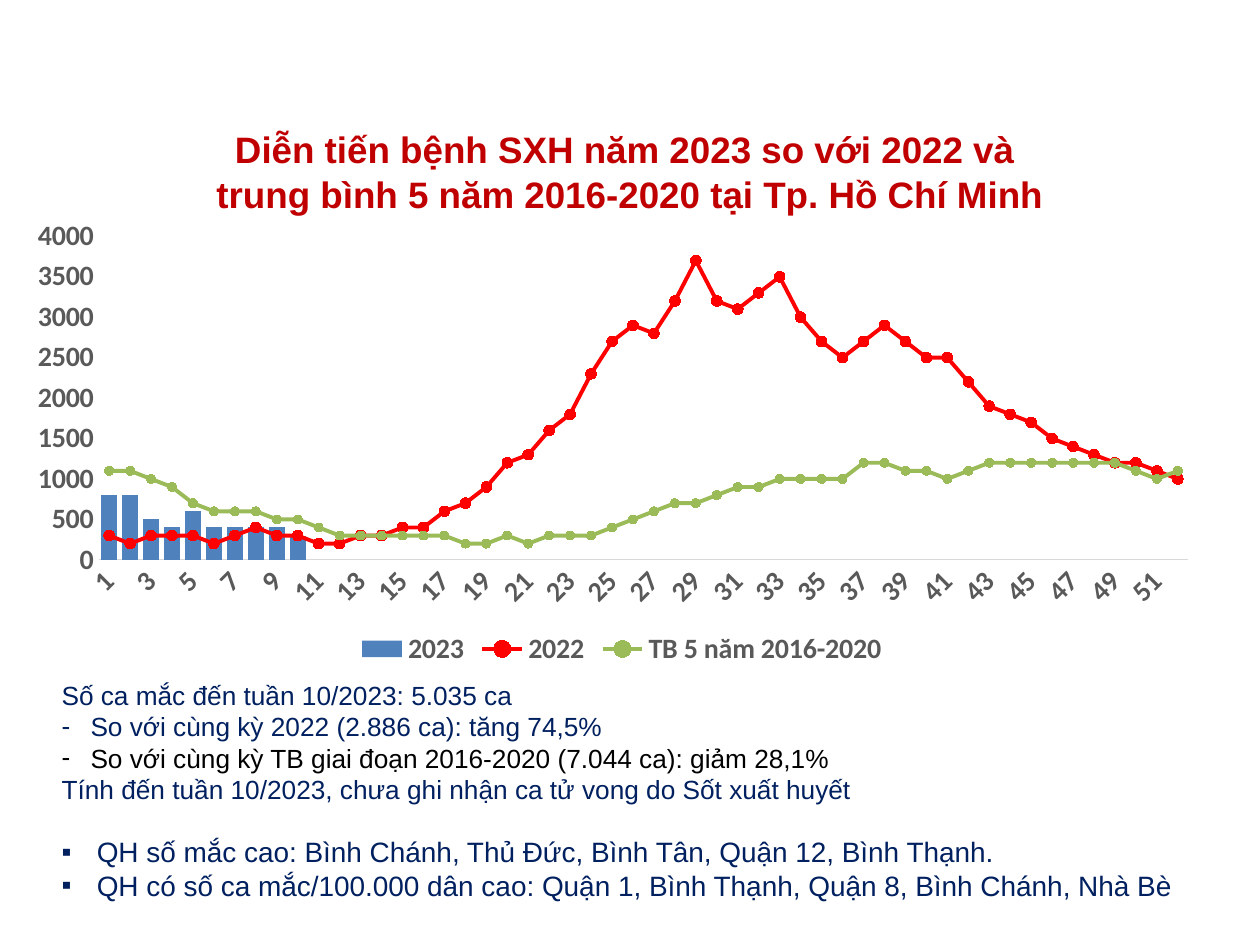
from dataclasses import dataclass

from lxml import etree
from pptx import Presentation
from pptx import util as u
from pptx.chart.data import CategoryChartData
from pptx.dml.color import RGBColor
from pptx.enum import chart as charts
from pptx.enum import text
from pptx.oxml.ns import qn


@dataclass(frozen=True)
class Theme:
    title: str = "C00000"
    body: str = "002060"
    black: str = "000000"
    axis_text: str = "595959"
    axis_line: str = "D9D9D9"
    text_font: str = "Arial"
    chart_font: str = "Calibri"
    title_size: int = 21
    note_size: int = 15
    district_size: int = 16
    chart_size: int = 16
    line_width: float = 2.25


THEME = Theme()


@dataclass(frozen=True)
class Note:
    words: str
    size: int = THEME.note_size
    color: str = THEME.body
    bullet: str = ""
    indent: float = 0
    align: text.PP_ALIGN = text.PP_ALIGN.LEFT
    before: float = 0


@dataclass(frozen=True)
class WeeklyCases:
    name: str
    color: str
    hundreds: tuple[int, ...]
    marker_size: int = 0


def district(words: str, before: float = 0) -> Note:
    return Note(words, THEME.district_size, bullet="▪", indent=0.28,
                align=text.PP_ALIGN.JUSTIFY, before=before)


TITLE_LINES = (
    "Diễn tiến bệnh SXH năm 2023 so với 2022 và ",
    "trung bình 5 năm 2016-2020 tại Tp. Hồ Chí Minh",
)
NOTES = (
    Note("Số ca mắc đến tuần 10/2023: 5.035 ca"),
    Note("So với cùng kỳ 2022 (2.886 ca): tăng 74,5%", bullet="-", indent=0.23),
    Note("So với cùng kỳ TB giai đoạn 2016-2020 (7.044 ca): giảm 28,1%",
         color=THEME.black, bullet="-", indent=0.23),
    Note("Tính đến tuần 10/2023, chưa ghi nhận ca tử vong do Sốt xuất huyết"),
    district("QH số mắc cao: Bình Chánh, Thủ Đức, Bình Tân, Quận 12, Bình Thạnh.", before=17),
    district("QH có số ca mắc/100.000 dân cao: Quận 1, Bình Thạnh, Quận 8, Bình Chánh, Nhà Bè"),
)
WEEKS = 52
YEARS = (
    WeeklyCases("2023", "4F81BD", (8, 8, 5, 4, 6, 4, 4, 4, 4, 3)),
    WeeklyCases("2022", "FF0000", (
        3, 2, 3, 3, 3, 2, 3, 4, 3, 3, 2, 2, 3, 3, 4, 4, 6, 7, 9, 12, 13, 16, 18, 23, 27, 29,
        28, 32, 37, 32, 31, 33, 35, 30, 27, 25, 27, 29, 27, 25, 25, 22, 19, 18, 17, 15, 14, 13,
        12, 12, 11, 10), 6),
    WeeklyCases("TB 5 năm 2016-2020", "9BBB59", (
        11, 11, 10, 9, 7, 6, 6, 6, 5, 5, 4, 3, 3, 3, 3, 3, 3, 2, 2, 3, 2, 3, 3, 3, 4, 5,
        6, 7, 7, 8, 9, 9, 10, 10, 10, 12, 12, 11, 11, 10, 11, 12, 12, 12, 12, 12, 12, 12,
        11, 10, 11), 5),
)
# The five-year mean stays level at 1000 for three weeks before it rises.
MEAN_WEEKS = YEARS[2].hundreds[:34] + (10,) + YEARS[2].hundreds[34:]


def style_font(font, name: str, size: float, color: str, bold: bool = False) -> None:
    font.name, font.size, font.bold = name, u.Pt(size), bold
    font.color.rgb = RGBColor.from_string(color)


def add_title(page) -> None:
    box = page.shapes.title
    box.left, box.top, box.width, box.height = map(u.Inches, (0, 1.21, 10, 0.61))
    frame = box.text_frame
    frame.word_wrap = True
    frame.auto_size = text.MSO_AUTO_SIZE.NONE
    frame.vertical_anchor = text.MSO_ANCHOR.BOTTOM
    frame.margin_bottom = u.Inches(0.11)
    para = frame.paragraphs[0]
    para.alignment = text.PP_ALIGN.CENTER
    for index, line in enumerate(TITLE_LINES):
        if index:
            para.add_line_break()
        span = para.add_run()
        span.text = line
        style_font(span.font, THEME.text_font, THEME.title_size, THEME.title, True)


def set_bullet(para, bullet: str, indent: float) -> None:
    properties = para._p.get_or_add_pPr()
    properties.set("marL", str(u.Inches(indent)))
    properties.set("indent", str(-u.Inches(indent)))
    etree.SubElement(properties, qn("a:buFont"), typeface=THEME.text_font)
    etree.SubElement(properties, qn("a:buChar"), char=bullet)


def add_notes(page) -> None:
    box = page.shapes.add_textbox(*map(u.Inches, (0.39, 5.34, 9.22, 1.9)))
    frame = box.text_frame
    frame.word_wrap = True
    frame.auto_size = text.MSO_AUTO_SIZE.SHAPE_TO_FIT_TEXT
    for index, note in enumerate(NOTES):
        para = frame.add_paragraph() if index else frame.paragraphs[0]
        para.alignment = note.align
        para.space_before = u.Pt(note.before)
        if note.bullet:
            set_bullet(para, note.bullet, note.indent)
        span = para.add_run()
        span.text = note.words
        style_font(span.font, THEME.text_font, note.size, note.color)


def move_to_lines(chart) -> None:
    """Turn every series after the first into a line on the same axes."""
    bars = chart.plots[0]._element
    lines = etree.Element(qn("c:lineChart"))
    etree.SubElement(lines, qn("c:grouping"), val="standard")
    etree.SubElement(lines, qn("c:varyColors"), val="0")
    for series in bars.findall(qn("c:ser"))[1:]:
        for flag in series.findall(qn("c:invertIfNegative")):
            series.remove(flag)
        lines.append(series)
    etree.SubElement(lines, qn("c:marker"), val="1")
    for axis in bars.findall(qn("c:axId")):
        etree.SubElement(lines, qn("c:axId"), val=axis.get("val"))
    bars.addnext(lines)


def place_plot(chart, x: float, y: float, w: float, h: float) -> None:
    area = chart._chartSpace.find(".//" + qn("c:plotArea"))
    for old in area.findall(qn("c:layout")):
        area.remove(old)
    layout = etree.Element(qn("c:layout"))
    manual = etree.SubElement(layout, qn("c:manualLayout"))
    settings = {"layoutTarget": "inner", "xMode": "edge", "yMode": "edge",
                "x": x, "y": y, "w": w, "h": h}
    for name, value in settings.items():
        etree.SubElement(manual, qn("c:" + name), val=str(value))
    area.insert(0, layout)


def style_axes(chart) -> None:
    weeks, cases = chart.category_axis, chart.value_axis
    for axis in (weeks, cases):
        axis.has_major_gridlines = False
        axis.major_tick_mark = axis.minor_tick_mark = charts.XL_TICK_MARK.NONE
        style_font(axis.tick_labels.font, THEME.chart_font, THEME.chart_size,
                   THEME.axis_text, True)
    weeks.format.line.color.rgb = RGBColor.from_string(THEME.axis_line)
    weeks.format.line.width = u.Pt(0.75)
    weeks._element.find(qn("c:txPr")).find(qn("a:bodyPr")).set("rot", "-2700000")
    cases.format.line.fill.background()
    cases.minimum_scale, cases.maximum_scale, cases.major_unit = 0, 4000, 500


def style_line(series, year: WeeklyCases) -> None:
    color = RGBColor.from_string(year.color)
    series.smooth = False
    series.format.line.color.rgb = color
    series.format.line.width = u.Pt(THEME.line_width)
    marker = series.marker
    marker.style, marker.size = charts.XL_MARKER_STYLE.CIRCLE, year.marker_size
    marker.format.fill.solid()
    marker.format.fill.fore_color.rgb = color
    marker.format.line.color.rgb = color


def add_case_chart(page) -> None:
    data = CategoryChartData()
    data.categories = [str(week) for week in range(1, WEEKS + 1)]
    for year in YEARS:
        hundreds = MEAN_WEEKS if year is YEARS[2] else year.hundreds
        values = [100 * count for count in hundreds]
        data.add_series(year.name, values + [None] * (WEEKS - len(values)))
    chart = page.shapes.add_chart(charts.XL_CHART_TYPE.COLUMN_CLUSTERED,
                                  *map(u.Inches, (0.27, 1.74, 9.33, 3.59)), data).chart
    chart.has_title = False
    style_font(chart.font, THEME.chart_font, THEME.chart_size, THEME.black, True)
    move_to_lines(chart)
    place_plot(chart, 0.055, 0.037, 0.927, 0.716)
    style_axes(chart)
    bars, lines = chart.plots
    bars.gap_width, bars.overlap, bars.vary_by_categories = 28, -66, False
    bars.series[0].format.fill.solid()
    bars.series[0].format.fill.fore_color.rgb = RGBColor.from_string(YEARS[0].color)
    for series, year in zip(lines.series, YEARS[1:]):
        style_line(series, year)
    chart.has_legend = True
    chart.legend.position = charts.XL_LEGEND_POSITION.BOTTOM
    chart.legend.include_in_layout = False
    style_font(chart.legend.font, THEME.chart_font, THEME.chart_size, THEME.axis_text, True)


def main() -> None:
    deck = Presentation()
    deck.slide_width, deck.slide_height = u.Inches(10), u.Inches(7.5)
    page = deck.slides.add_slide(deck.slide_layouts[5])
    add_title(page)
    add_notes(page)
    add_case_chart(page)
    deck.save("out.pptx")


if __name__ == "__main__":
    main()
